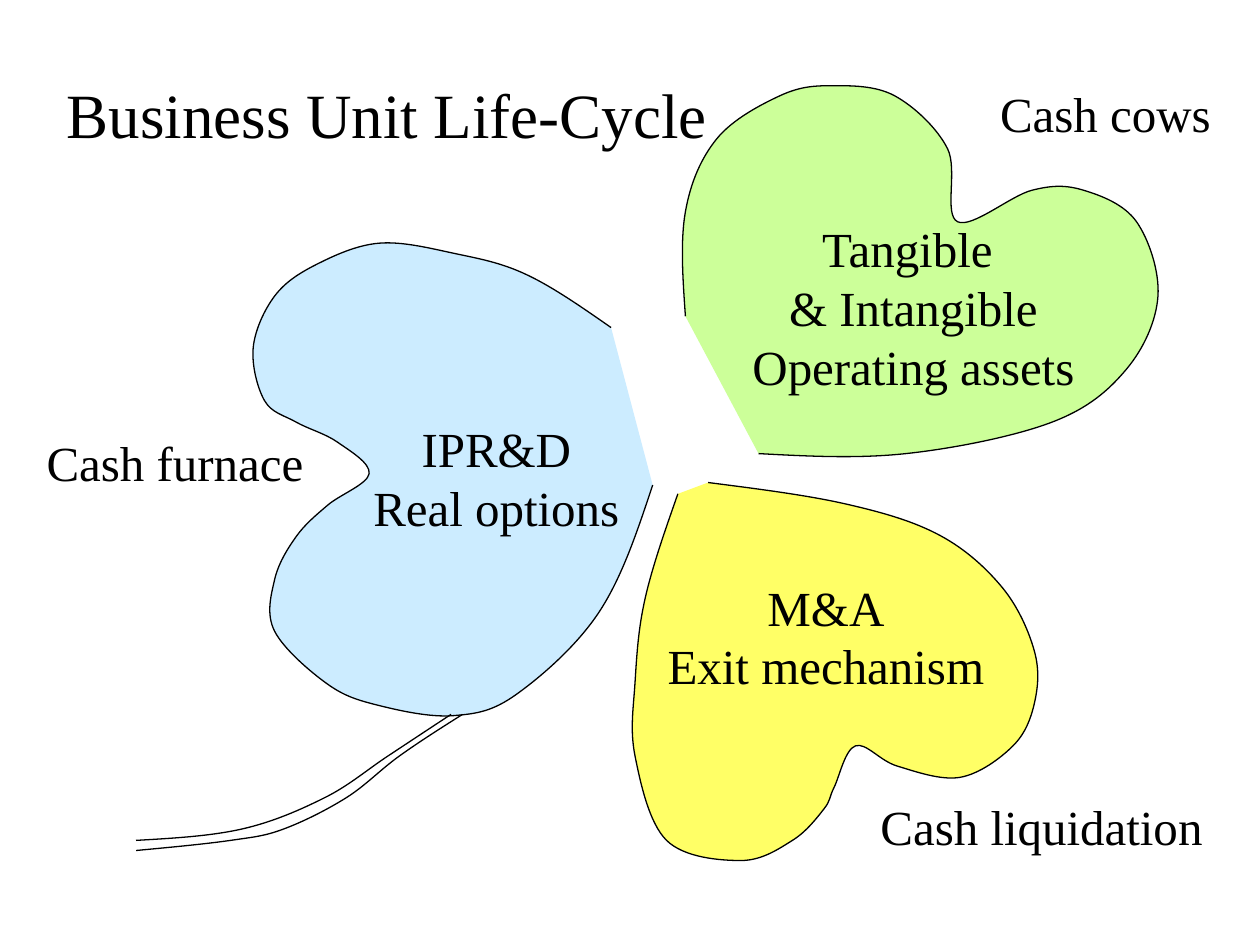
import pptx
import pptx.dml.color
import pptx.enum.text
import pptx.oxml
import pptx.oxml.ns
import pptx.util

Cm = pptx.util.Cm
RGBColor = pptx.dml.color.RGBColor
PP_ALIGN = pptx.enum.text.PP_ALIGN

BLACK = RGBColor(0x00, 0x00, 0x00)
GREEN = RGBColor(0xCC, 0xFF, 0x99)
BLUE = RGBColor(0xCC, 0xEC, 0xFF)
YELLOW = RGBColor(0xFF, 0xFF, 0x66)
GRID = Cm(2.54)  # one unit of the curve knots below

# Knots that each curve passes through
GREEN_LEAF = [
    (5.44, 2.51), (5.44, 1.68), (5.69, 1.1), (6.19, 0.76), (6.6, 0.68),
    (7.1, 0.76), (7.52, 1.18), (7.6, 1.76), (8.19, 1.51), (8.6, 1.51),
    (9.02, 1.76), (9.19, 2.35), (8.94, 2.93), (8.35, 3.35), (7.19, 3.6),
    (6.02, 3.6)]
BLUE_LEAF = [
    (4.85, 2.6), (4.18, 2.18), (3.6, 2.01), (3.01, 1.93), (2.51, 2.1),
    (2.18, 2.35), (2.01, 2.76), (2.1, 3.18), (2.35, 3.35), (2.68, 3.51),
    (2.93, 3.76), (2.6, 4.01), (2.35, 4.26), (2.18, 4.6), (2.18, 5.01),
    (2.6, 5.43), (3.01, 5.6), (3.6, 5.68), (4.1, 5.51), (4.76, 4.85),
    (5.18, 3.85)]
YELLOW_LEAF = [
    (5.62, 3.83), (6.71, 4), (7.46, 4.25), (7.96, 4.67), (8.21, 5.17),
    (8.21, 5.58), (8.04, 5.92), (7.62, 6.17), (7.12, 6.08), (6.79, 5.92),
    (6.62, 6.25), (6.54, 6.42), (6.29, 6.67), (5.88, 6.83), (5.29, 6.67),
    (5.04, 6), (5.04, 5.42), (5.12, 4.75), (5.38, 3.92)]
STEM_TOP = [(1.08, 6.67), (1.92, 6.58), (2.58, 6.33), (3.08, 6), (3.58, 5.67)]
STEM_BOTTOM = [(1.08, 6.75), (1.83, 6.67), (2.25, 6.58), (2.75, 6.33),
               (3.17, 6), (3.67, 5.67)]


def smooth(knots):
    """Return two controls and an end point for each span between knots."""
    def shifted(i, sign):
        return tuple(p + sign * (b - a) / 6 for a, p, b
                     in zip(knots[i - 1], knots[i], knots[i + 1]))

    def middle(a, b):
        return tuple((u + v) / 2 for u, v in zip(a, b))

    points = []
    last = len(knots) - 2
    for i in range(last + 1):
        c1 = shifted(i, 1) if i > 0 else None
        c2 = shifted(i + 1, -1) if i < last else middle(c1, knots[-1])
        points += [c1 or middle(knots[0], c2), c2, knots[i + 1]]
    return points


def write_text(tf, text, size=28, font="Times New Roman", color=BLACK,
               align=PP_ALIGN.LEFT, wrap=False):
    tf.word_wrap = wrap
    tf.auto_size = pptx.enum.text.MSO_AUTO_SIZE.SHAPE_TO_FIT_TEXT
    tf.vertical_anchor = pptx.enum.text.MSO_ANCHOR.TOP
    for i, line in enumerate(text.split("\n")):
        p = tf.add_paragraph() if i else tf.paragraphs[0]
        p.alignment = align
        r = p.add_run()
        r.text = line
        r.font.size = pptx.util.Pt(size)
        r.font.name = font
        r.font.color.rgb = color


class SlideBuilder:
    def __init__(self, s):
        self.s = s
        self.line_color = BLACK
        self.line_width = pptx.util.Pt(0.75)

    def title(self, text, x, y, w, h):
        sp = self.s.shapes.title
        sp.left, sp.top, sp.width, sp.height = Cm(x), Cm(y), Cm(w), Cm(h)
        write_text(sp.text_frame, text, size=36)

    def label(self, text, x, y, w, h, **fmt):
        sp = self.s.shapes.add_textbox(Cm(x), Cm(y), Cm(w), Cm(h))
        write_text(sp.text_frame, text, **fmt)

    def curve(self, knots, fill=None):
        # Freeform coordinates are whole numbers, so scale the knots first
        knots = [(x * GRID, y * GRID) for x, y in knots]
        builder = self.s.shapes.build_freeform(*knots[0])
        builder.add_line_segments(smooth(knots), close=False)
        sp = builder.convert_to_shape()
        # Turn every three line points into one Bezier segment
        segments = sp._element.xpath(".//a:lnTo")
        for i in range(0, len(segments), 3):
            bezier = pptx.oxml.parse_xml(
                "<a:cubicBezTo %s/>" % pptx.oxml.ns.nsdecls("a"))
            segments[i].addprevious(bezier)
            for segment in segments[i:i + 3]:
                bezier.append(segment[0])
                segment.getparent().remove(segment)
        sp.shadow.inherit = False
        sp.line.color.rgb = self.line_color
        sp.line.width = self.line_width
        if fill is None:
            sp.fill.background()
        else:
            sp.fill.solid()
            sp.fill.fore_color.rgb = fill


def main():
    prs = pptx.Presentation()
    prs.slide_width, prs.slide_height = Cm(25.4), Cm(19.05)
    slide = SlideBuilder(prs.slides.add_slide(prs.slide_layouts[5]))

    # Clover: three leaves and a stem
    slide.curve(GREEN_LEAF, GREEN)
    slide.curve(BLUE_LEAF, BLUE)
    slide.curve(YELLOW_LEAF, YELLOW)
    slide.curve(STEM_TOP)
    slide.curve(STEM_BOTTOM)

    # Title and cash stages
    slide.title("Business Unit Life-Cycle", 1.09, 1.4, 13.8, 1.78)
    slide.label("Cash cows", 19.91, 1.55, 4.75, 1.45)
    slide.label("Cash furnace", 0.69, 8.59, 5.69, 1.45)
    slide.label("Cash liquidation", 17.5, 15.93, 7.01, 1.45)

    # Leaf contents
    center = PP_ALIGN.CENTER
    slide.label("IPR&D\nReal options", 7.11, 8.31, 5.79, 2.62,
                align=center, wrap=True)
    slide.label("Tangible \n& Intangible\nOperating assets",
                14.91, 4.29, 7.01, 3.81, align=center)
    slide.label("M&A\nExit mechanism", 13.15, 11.51, 7, 2.62, align=center)

    prs.save("out.pptx")


if __name__ == "__main__":
    main()
